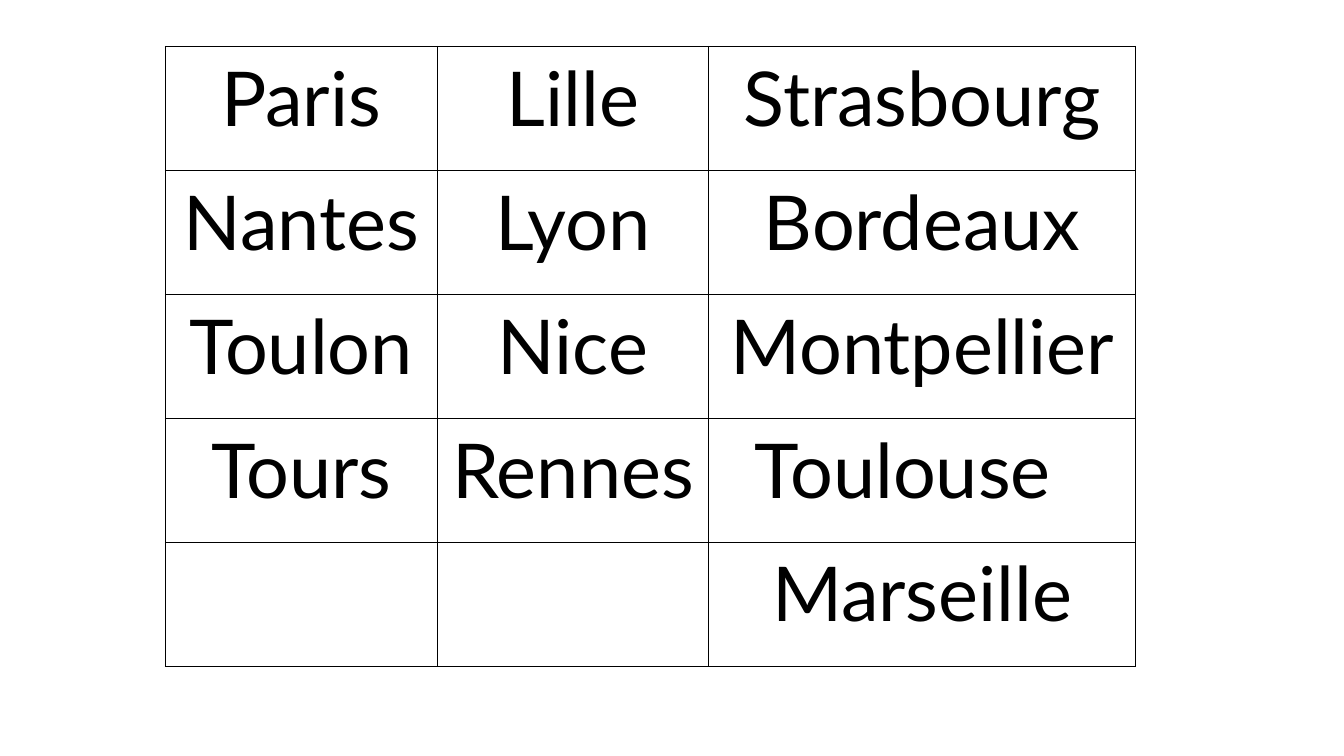
import pptx
import pptx.dml.color
import pptx.enum.text
import pptx.oxml
import pptx.oxml.ns
import pptx.util

Cm = pptx.util.Cm
BLACK = pptx.dml.color.RGBColor(0, 0, 0)
WHITE = pptx.dml.color.RGBColor(255, 255, 255)

CITIES = [
    ["Paris", "Lille", "Strasbourg"],
    ["Nantes", "Lyon", "Bordeaux"],
    ["Toulon", "Nice", "Montpellier"],
    ["Tours", "Rennes", "Toulouse"],
    ["", "", "Marseille"],
]
COLUMN_SHARES = [0.28, 0.28, 0.44]
RIGHT_MARGINS = {"Toulouse": Cm(1.23)}
CITY_FORMAT = {"name": "Lato", "size": pptx.util.Pt(54), "bold": False}


def add_borders(cell):
    properties = cell._tc.get_or_add_tcPr()
    for position, side in enumerate(["lnL", "lnR", "lnT", "lnB"]):
        border = pptx.oxml.parse_xml(
            f'<a:{side} {pptx.oxml.ns.nsdecls("a")} w="{pptx.util.Pt(1)}">'
            f'<a:solidFill><a:srgbClr val="{BLACK}"/></a:solidFill></a:{side}>'
        )
        properties.insert(position, border)


def fill_cell(cell, city):
    cell.fill.solid()
    cell.fill.fore_color.rgb = WHITE
    add_borders(cell)
    if not city:
        return
    if city in RIGHT_MARGINS:
        cell.margin_right = RIGHT_MARGINS[city]
    para = cell.text_frame.paragraphs[0]
    para.alignment = pptx.enum.text.PP_ALIGN.CENTER
    span = para.add_run()
    span.text = city
    for name, value in CITY_FORMAT.items():
        setattr(span.font, name, value)
    span.font.color.rgb = BLACK


def add_city_table(page, left, top, width, height):
    table = page.shapes.add_table(
        len(CITIES), len(COLUMN_SHARES), left, top, width, height
    ).table
    table.first_row = False
    table.horz_banding = False
    for column, share in zip(table.columns, COLUMN_SHARES):
        column.width = int(width * share)
    for row, cities in zip(table.rows, CITIES):
        row.height = height // len(CITIES)
        for cell, city in zip(row.cells, cities):
            fill_cell(cell, city)


def main():
    deck = pptx.Presentation()
    deck.slide_width = Cm(33.87)
    deck.slide_height = Cm(19.05)
    page = deck.slides.add_slide(deck.slide_layouts[6])
    add_city_table(page, Cm(4.17), Cm(1.17), Cm(24.45), Cm(15.62))
    deck.save("out.pptx")


if __name__ == "__main__":
    main()
